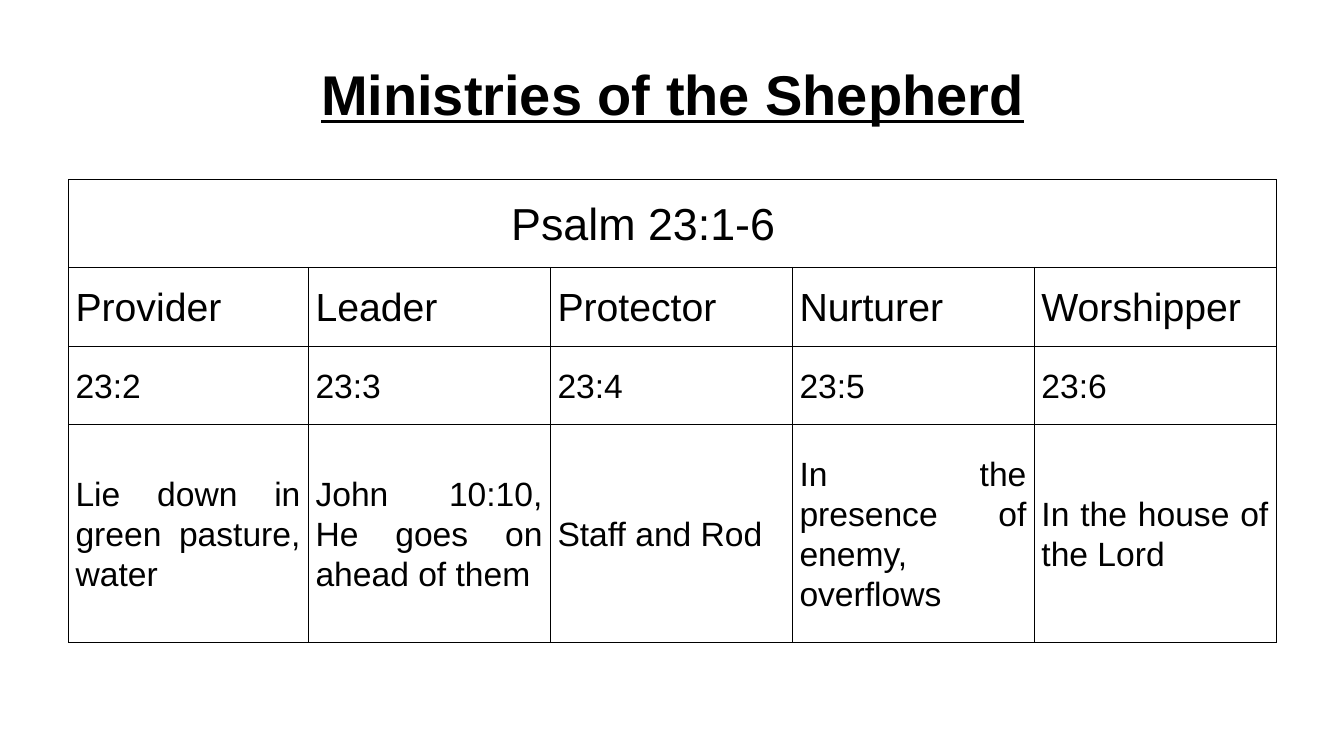
from dataclasses import dataclass

from lxml.etree import SubElement
from pptx import Presentation
from pptx.dml.color import RGBColor
from pptx.enum.text import MSO_ANCHOR, PP_ALIGN
from pptx.oxml.ns import qn
from pptx.util import Inches, Pt


@dataclass(frozen=True)
class Theme:
    font: str = "Arial"
    ink: str = "000000"
    title: int = 40
    passage: int = 32
    ministry: int = 28
    body: int = 24
    border: float = 0.28


THEME = Theme()
PASSAGE = "Psalm 23:1-6"
PASSAGE_INDENT = 4.32
MINISTRIES = [
    ("Provider", "23:2", "Lie down in green pasture, water"),
    ("Leader", "23:3", "John 10:10, He goes on ahead of them"),
    ("Protector", "23:4", "Staff and Rod"),
    ("Nurturer", "23:5", "In the presence of enemy, overflows"),
    ("Worshipper", "23:6", "In the house of the Lord"),
]
COLUMN_WIDTHS = [2.38, 2.4, 2.4, 2.4, 2.4]
ROW_HEIGHTS = [0.87, 0.78, 0.78, 2.16]
ROW_SIZES = [THEME.ministry, THEME.body, THEME.body]


def style_paragraph(paragraph, size, alignment):
    paragraph.alignment = alignment
    paragraph.font.name = THEME.font
    paragraph.font.size = Pt(size)
    paragraph.font.color.rgb = RGBColor.from_string(THEME.ink)


def add_title(slide, text):
    title = slide.shapes.add_textbox(Inches(0.67), Inches(0.3), Inches(12), Inches(1.25))
    frame = title.text_frame
    frame.word_wrap = True
    frame.vertical_anchor = MSO_ANCHOR.MIDDLE
    heading = frame.paragraphs[0]
    heading.text = text
    style_paragraph(heading, THEME.title, PP_ALIGN.CENTER)
    heading.font.bold = True
    heading.font.underline = True


def add_borders(cell):
    properties = cell._tc.get_or_add_tcPr()
    for position, side in enumerate(("a:lnL", "a:lnR", "a:lnT", "a:lnB")):
        line = SubElement(properties, qn(side), w=str(Pt(THEME.border)))
        fill = SubElement(line, qn("a:solidFill"))
        SubElement(fill, qn("a:srgbClr"), val=THEME.ink)
        properties.remove(line)
        properties.insert(position, line)


def fill_cell(cell, text, size, indent=0):
    cell.text = text
    cell.vertical_anchor = MSO_ANCHOR.MIDDLE
    cell.margin_left, cell.margin_right = Inches(0.07), Inches(0.08)
    cell.margin_top = cell.margin_bottom = Inches(0.02)
    paragraph = cell.text_frame.paragraphs[0]
    style_paragraph(paragraph, size, PP_ALIGN.JUSTIFY)
    paragraph.line_spacing = 1.07
    paragraph.space_after = Pt(8)
    properties = paragraph._p.get_or_add_pPr()
    properties.set("marL", str(Inches(indent)))
    properties.set("indent", "0")


def add_ministries_table(slide):
    table = slide.shapes.add_table(
        len(ROW_HEIGHTS), len(COLUMN_WIDTHS), Inches(0.68), Inches(1.78),
        Inches(sum(COLUMN_WIDTHS)), Inches(sum(ROW_HEIGHTS)),
    ).table
    table.first_row = table.horz_banding = False
    for column, width in zip(table.columns, COLUMN_WIDTHS):
        column.width = Inches(width)
    for row, height in zip(table.rows, ROW_HEIGHTS):
        row.height = Inches(height)
    for cell in table.iter_cells():
        cell.fill.background()
        add_borders(cell)

    table.cell(0, 0).merge(table.cell(0, len(COLUMN_WIDTHS) - 1))
    fill_cell(table.cell(0, 0), PASSAGE, THEME.passage, PASSAGE_INDENT)
    for column, ministry in enumerate(MINISTRIES):
        for row, (text, size) in enumerate(zip(ministry, ROW_SIZES), start=1):
            fill_cell(table.cell(row, column), text, size)


def main():
    presentation = Presentation()
    presentation.slide_width = Inches(13.33)
    presentation.slide_height = Inches(7.5)
    slide = presentation.slides.add_slide(presentation.slide_layouts[6])
    add_title(slide, "Ministries of the Shepherd")
    add_ministries_table(slide)
    presentation.save("out.pptx")


if __name__ == "__main__":
    main()
